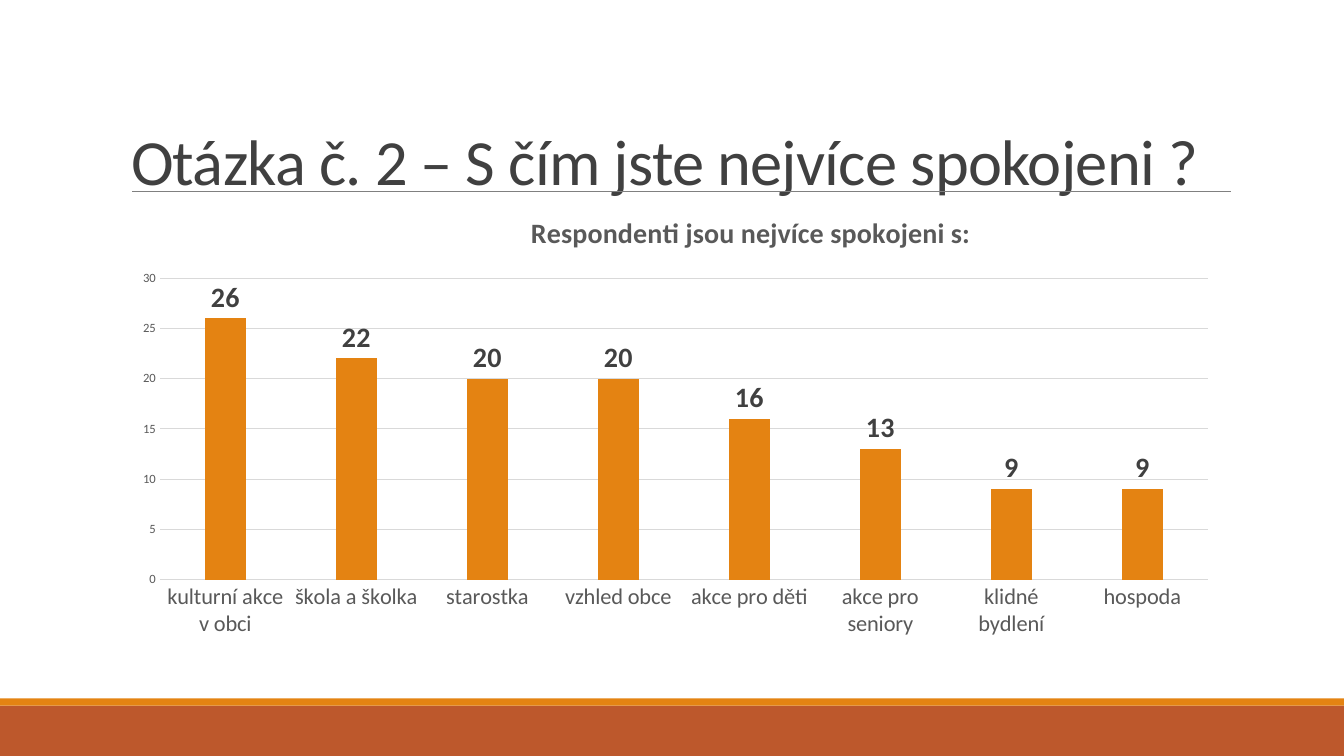
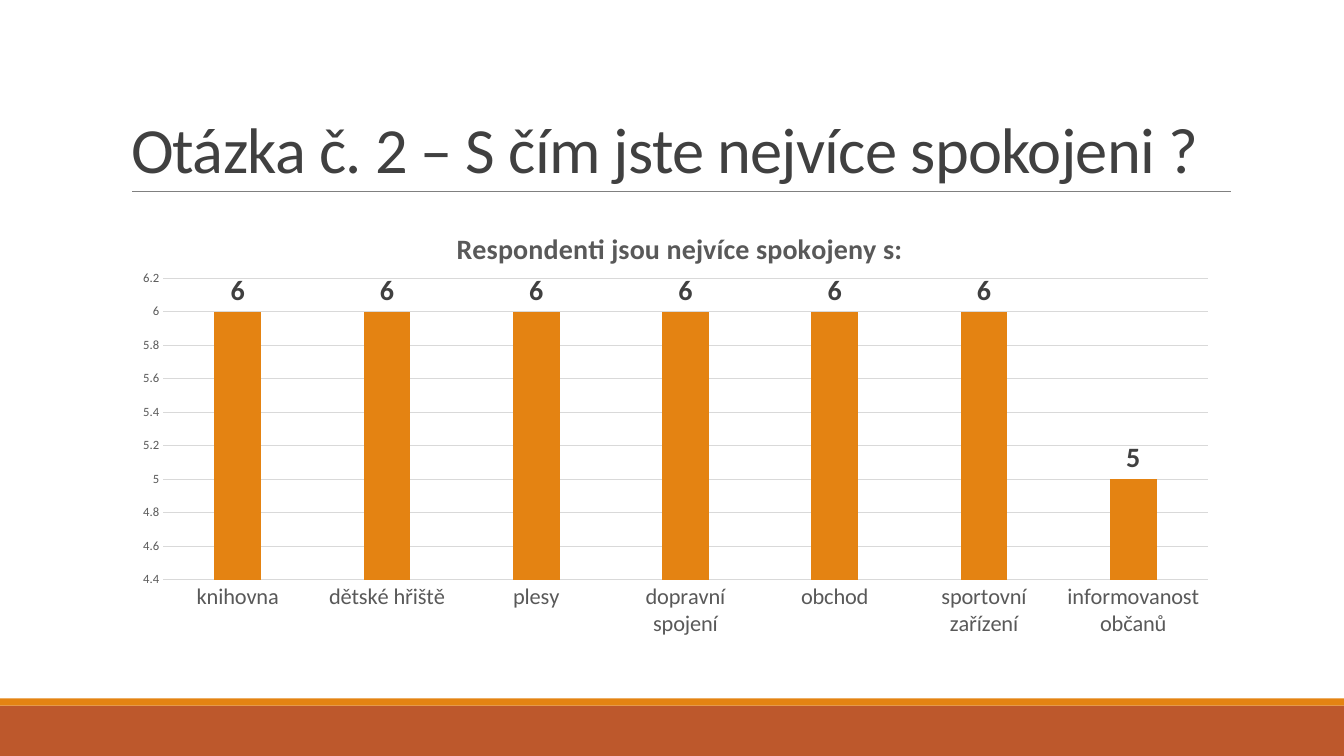
from lxml.etree import SubElement
from pptx import Presentation
from pptx.chart.data import CategoryChartData
from pptx.dml.color import RGBColor
from pptx.enum.chart import XL_CHART_TYPE as ChartType, XL_LABEL_POSITION as LabelPosition, XL_TICK_MARK as TickMark
from pptx.enum.shapes import MSO_CONNECTOR as Connector, MSO_SHAPE as Shape
from pptx.enum.text import MSO_ANCHOR as Anchor, MSO_AUTO_SIZE as AutoSize, PP_ALIGN as Align
from pptx.oxml import parse_xml
from pptx.oxml.ns import nsdecls, qn
from pptx.util import Inches, Pt

FONT = "Calibri"
COLORS = {
    "band": "BD582C",
    "accent": "E48312",
    "rule": "808080",
    "heading": "404040",
    "muted": "595959",
    "grid": "D9D9D9",
}
HEADING = "Otázka č. 2 – S čím jste nejvíce spokojeni ?"
QUESTION_SLIDES = [
    {
        "heading_top": 0.43,
        "caption": "Respondenti jsou nejvíce spokojeni s:",
        "caption_at": (0.365, 0.01),
        "plot_box": (0.035, 0.168, 0.945, 0.68),
        "scale": (0, 30, 5),
        "answers": {
            "kulturní akce v obci": 26,
            "škola a školka": 22,
            "starostka": 20,
            "vzhled obce": 20,
            "akce pro děti": 16,
            "akce pro seniory": 13,
            "klidné bydlení": 9,
            "hospoda": 9,
        },
    },
    {
        "heading_top": 0.31,
        "caption": "Respondenti jsou nejvíce spokojeny s:",
        "caption_at": (0.298, 0.045),
        "plot_box": (0.038, 0.168, 0.942, 0.68),
        "scale": (4.4, 6.2, 0.2),
        "answers": {
            "knihovna": 6,
            "dětské hřiště": 6,
            "plesy": 6,
            "dopravní spojení": 6,
            "obchod": 6,
            "sportovní zařízení": 6,
            "informovanost občanů": 5,
        },
    },
]


def color(name):
    """Return a named palette colour."""
    return RGBColor.from_string(COLORS[name])


def style_font(font, size, color_name, bold=False):
    """Apply the deck's typeface with a size, colour and weight."""
    font.name = FONT
    font.size = Pt(size)
    font.bold = bold
    font.color.rgb = color(color_name)


def style_line(line, color_name, width):
    """Give a line its colour and width in points."""
    line.color.rgb = color(color_name)
    line.width = Pt(width)


def add_frame(slide):
    """Draw the footer bands and the rule below the heading."""
    for top, height, name in ((7, 0.5, "band"), (6.93, 0.07, "accent")):
        band = slide.shapes.add_shape(
            Shape.RECTANGLE, 0, Inches(top), Inches(13.33), Inches(height))
        band.shadow.inherit = False
        band.fill.solid()
        band.fill.fore_color.rgb = color(name)
        band.line.fill.background()
    rule = slide.shapes.add_connector(
        Connector.STRAIGHT, Inches(1.31), Inches(1.9), Inches(12.21), Inches(1.9))
    style_line(rule.line, "rule", 0.5)
    SubElement(rule._element.spPr, qn("a:effectLst"))


def add_heading(slide, left, top, width, height):
    """Fill the title placeholder with the question."""
    heading = slide.shapes.title
    heading.left, heading.top = Inches(left), Inches(top)
    heading.width, heading.height = Inches(width), Inches(height)
    frame = heading.text_frame
    frame.text = HEADING
    frame.word_wrap = True
    frame.auto_size = AutoSize.NONE
    frame.vertical_anchor = Anchor.BOTTOM
    paragraph = frame.paragraphs[0]
    paragraph.alignment = Align.LEFT
    paragraph.line_spacing = 0.85
    run = paragraph.runs[0]
    style_font(run.font, 46, "heading")
    run.font._element.set("spc", "-50")


def set_layout(element, index, fractions, inner=False):
    """Pin a chart part at fractions of the chart box."""
    for old in element.findall(qn("c:layout")):
        element.remove(old)
    settings = [("layoutTarget", "inner")] if inner else []
    settings += [("xMode", "edge"), ("yMode", "edge")]
    settings += zip("xywh", fractions)
    parts = "".join(f'<c:{tag} val="{value}"/>' for tag, value in settings)
    element.insert(index, parse_xml(
        f'<c:layout {nsdecls("c")}><c:manualLayout>{parts}</c:manualLayout></c:layout>'))


def style_axes(chart, scale):
    """Format the category axis, the value axis and its gridlines."""
    categories, values = chart.category_axis, chart.value_axis
    for axis, size in ((categories, 16), (values, 9)):
        axis.major_tick_mark = axis.minor_tick_mark = TickMark.NONE
        style_font(axis.tick_labels.font, size, "muted")
    style_line(categories.format.line, "grid", 0.75)
    values.format.line.fill.background()
    values.has_major_gridlines = True
    style_line(values.major_gridlines.format.line, "grid", 0.75)
    values.minimum_scale, values.maximum_scale, values.major_unit = scale
    values.tick_labels.number_format = "General"
    values.tick_labels.number_format_is_linked = False


def add_answers_chart(slide, question, left, top, width, height):
    """Add the column chart of answers in the given box."""
    data = CategoryChartData()
    data.categories = list(question["answers"])
    data.add_series("Series 1", list(question["answers"].values()))
    chart = slide.shapes.add_chart(
        ChartType.COLUMN_CLUSTERED, Inches(left), Inches(top),
        Inches(width), Inches(height), data).chart
    chart.font.name = FONT
    chart.font.size = Pt(10)
    chart.has_legend = False
    chart.has_title = True
    caption = chart.chart_title
    caption.text_frame.text = question["caption"]
    style_font(caption.text_frame.paragraphs[0].runs[0].font, 20, "muted", bold=True)
    caption.include_in_layout = False
    set_layout(caption._element, 1, question["caption_at"])

    columns = chart.plots[0]
    set_layout(chart._chartSpace.chart.plotArea, 0, question["plot_box"], inner=True)
    columns.vary_by_categories = False
    columns.gap_width = 219
    columns.overlap = -27
    fill = columns.series[0].format.fill
    fill.solid()
    fill.fore_color.rgb = color("accent")
    columns.has_data_labels = True
    labels = columns.data_labels
    labels.show_value = True
    labels.position = LabelPosition.OUTSIDE_END
    style_font(labels.font, 20, "heading", bold=True)
    style_axes(chart, question["scale"])


def add_question_slide(deck, question):
    """Build one slide with the heading and its answers."""
    slide = deck.slides.add_slide(deck.slide_layouts[5])
    add_frame(slide)
    add_heading(slide, 1.2, question["heading_top"], 11, 1.59)
    add_answers_chart(slide, question, 1.2, 2.02, 11, 4.4)


def main():
    """Build and save the deck."""
    deck = Presentation()
    deck.slide_width, deck.slide_height = Inches(13.33), Inches(7.5)
    for question in QUESTION_SLIDES:
        add_question_slide(deck, question)
    deck.save("out.pptx")


if __name__ == "__main__":
    main()
